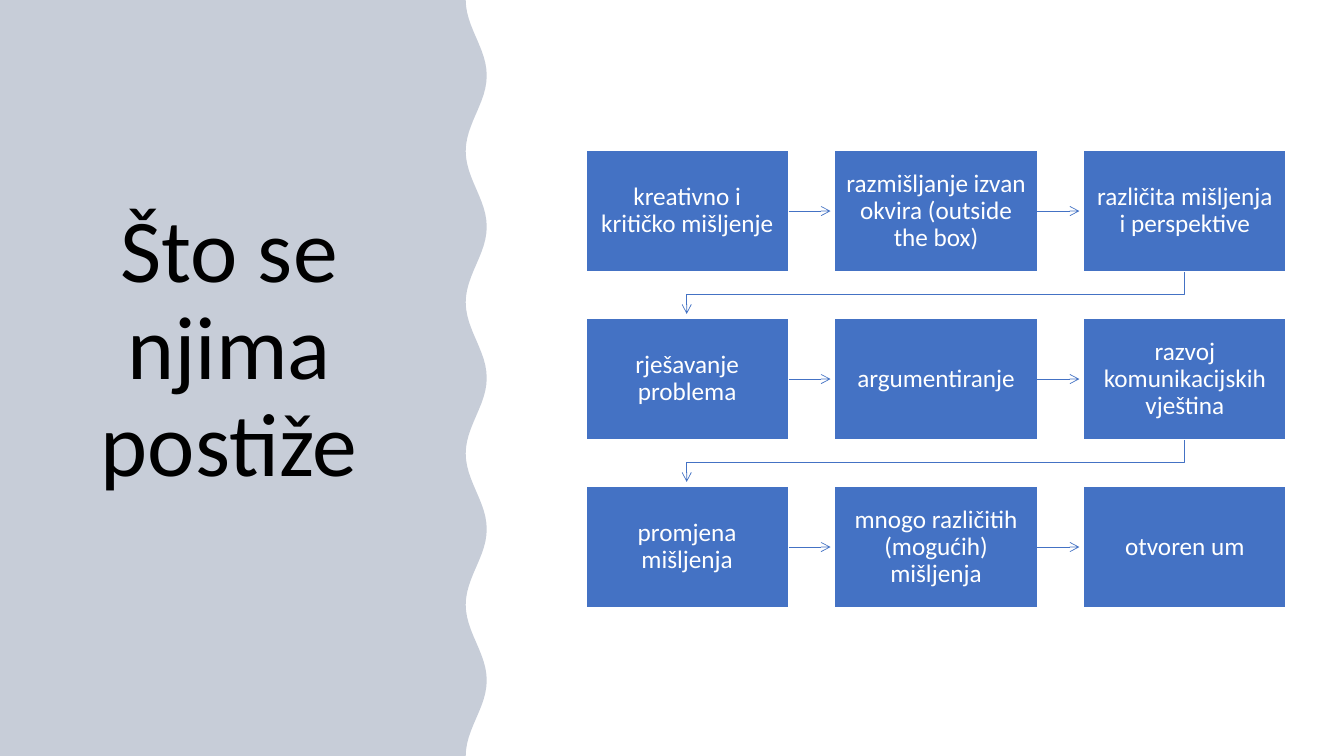
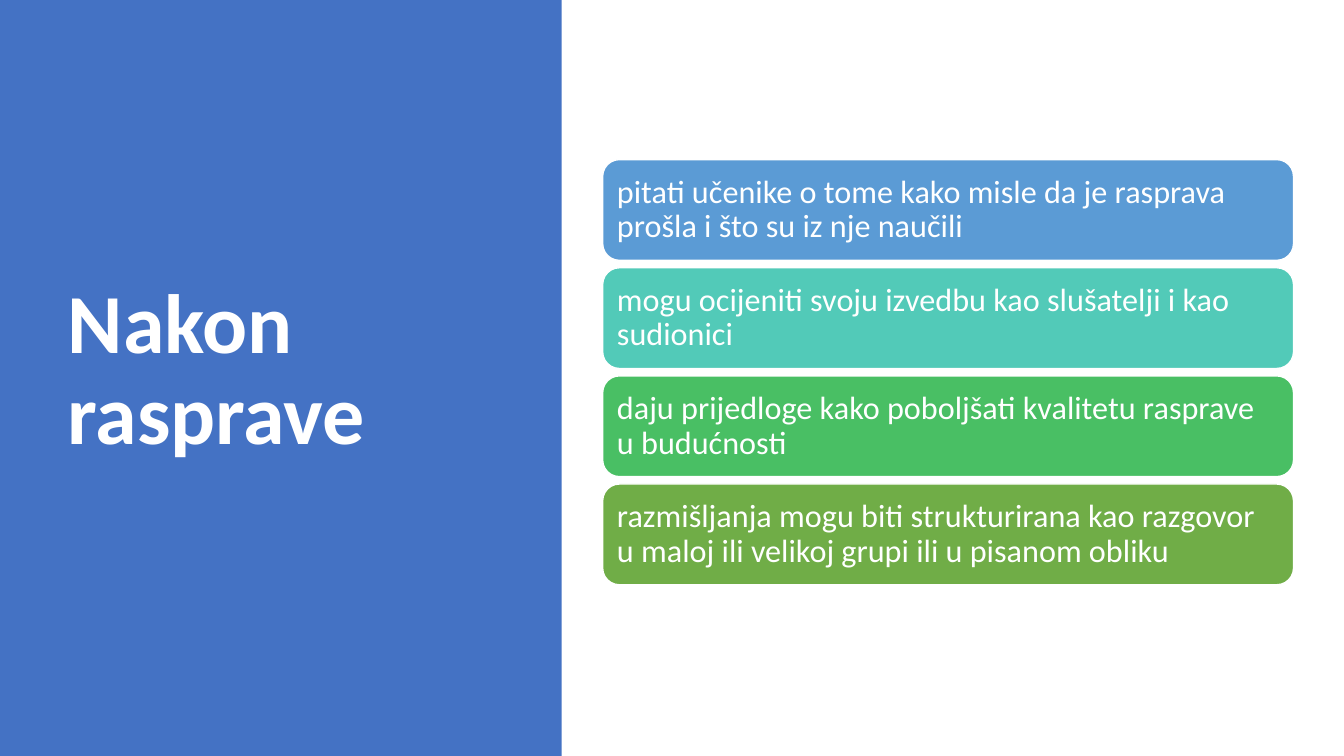
"""Builds two slides: a wave-edged flow of outcomes and a list of follow-up steps."""
from dataclasses import dataclass
from math import cos, pi
from typing import Any

from lxml.etree import SubElement
from pptx import Presentation
from pptx.dml.color import RGBColor
from pptx.enum.shapes import MSO_CONNECTOR, MSO_SHAPE
from pptx.enum.text import MSO_ANCHOR, MSO_AUTO_SIZE, PP_ALIGN
from pptx.oxml.ns import qn
from pptx.util import Emu, Pt

PX = 9525
PAGE_WIDTH, PAGE_HEIGHT = 1280, 720
FONT = "Calibri"
BLUE, NAVY, WHITE, BLACK = "4472C4", "203864", "FFFFFF", "000000"


@dataclass(frozen=True)
class Area:
    left: int
    top: int
    width: int
    height: int

    def emu(self) -> list[Emu]:
        return [px(value) for value in (self.left, self.top, self.width, self.height)]


@dataclass(frozen=True)
class TextStyle:
    size: int
    colour: str
    align: PP_ALIGN
    anchor: MSO_ANCHOR = MSO_ANCHOR.MIDDLE
    bold: bool = False


@dataclass(frozen=True)
class Card:
    text: str
    area: Area
    fill: str


STEPS = [
    ["kreativno i kritičko mišljenje", "razmišljanje izvan okvira (outside the box)",
     "različita mišljenja i perspektive"],
    ["rješavanje problema", "argumentiranje", "razvoj komunikacijskih vještina"],
    ["promjena mišljenja", "mnogo različitih (mogućih) mišljenja", "otvoren um"],
]
REFLECTIONS = [
    ("pitati učenike o tome kako misle da je rasprava prošla i što su iz nje naučili", "5B9BD5"),
    ("mogu ocijeniti svoju izvedbu kao slušatelji i kao sudionici", "52CAB8"),
    ("daju prijedloge kako poboljšati kvalitetu rasprave u budućnosti", "49BF64"),
    ("razmišljanja mogu biti strukturirana kao razgovor u maloj ili velikoj grupi "
     "ili u pisanom obliku", "70AD47"),
]


def px(value: float) -> Emu:
    return Emu(round(value * PX))


def colour(code: str) -> RGBColor:
    return RGBColor.from_string(code)


def apply(target: Any, values: dict[str, Any]) -> None:
    for name, value in values.items():
        setattr(target, name, value)


def write(shape: Any, text: str, style: TextStyle, inset: int | None = None) -> None:
    frame = shape.text_frame
    frame.text = text
    apply(frame, {"word_wrap": True, "auto_size": MSO_AUTO_SIZE.NONE,
                  "vertical_anchor": style.anchor})
    if inset is not None:
        sides = ("left", "right", "top", "bottom")
        apply(frame, {f"margin_{side}": px(inset) for side in sides})
    para = frame.paragraphs[0]
    apply(para, {"alignment": style.align, "line_spacing": 0.9})
    span = para.runs[0]
    apply(span.font, {"name": FONT, "size": Pt(style.size), "bold": style.bold})
    span.font.color.rgb = colour(style.colour)


def paint(shape: Any, fill: str, outline: str | None = None) -> None:
    shape.shadow.inherit = False
    shape.fill.solid()
    shape.fill.fore_color.rgb = colour(fill)
    if outline is None:
        shape.line.fill.background()
    else:
        shape.line.color.rgb = colour(outline)
        shape.line.width = Pt(1)


def draw_title(page: Any, text: str, area: Area, style: TextStyle) -> None:
    title = page.shapes.title
    apply(title, dict(zip(("left", "top", "width", "height"), area.emu())))
    write(title, text, style)
    page.shapes._spTree.append(title._element)


def draw_card(page: Any, card: Card, kind: MSO_SHAPE, style: TextStyle, inset: int) -> None:
    box = page.shapes.add_shape(kind, *card.area.emu())
    paint(box, card.fill, WHITE)
    write(box, card.text, style, inset)


def draw_wave(page: Any) -> None:
    middle, swing, period, step = 453.6, 10, 144, 6
    edge = [(px(middle - swing * cos(2 * pi * y / period)), px(y))
            for y in range(0, PAGE_HEIGHT + step, step)]
    builder = page.shapes.build_freeform(0, 0)
    builder.add_line_segments([*edge, (0, px(PAGE_HEIGHT))], close=True)
    panel = builder.convert_to_shape()
    paint(panel, NAVY)
    tint = panel._element.spPr.find(qn("a:solidFill"))[0]
    SubElement(tint, qn("a:alpha"), val="25000")


def finish_arrow(arrow: Any) -> None:
    arrow.line.color.rgb = colour(BLUE)
    arrow.line.width = Pt(0.5)
    SubElement(arrow.line._get_or_add_ln(), qn("a:tailEnd"), type="arrow")


def draw_arrow(page: Any, points: list[tuple[int, int]]) -> None:
    spots = [(px(x), px(y)) for x, y in points]
    if len(spots) == 2:
        arrow = page.shapes.add_connector(MSO_CONNECTOR.STRAIGHT, *spots[0], *spots[1])
        finish_arrow(arrow)
        SubElement(arrow._element.spPr, qn("a:effectLst"))
        return
    builder = page.shapes.build_freeform(*spots[0])
    builder.add_line_segments(spots[1:], close=False)
    arrow = builder.convert_to_shape()
    arrow.fill.background()
    finish_arrow(arrow)
    arrow.shadow.inherit = False


def build_outcomes(page: Any) -> None:
    draw_wave(page)
    draw_title(page, "Što se njima postiže", Area(48, 76, 340, 401),
               TextStyle(64, BLACK, PP_ALIGN.CENTER, MSO_ANCHOR.BOTTOM))
    left, top, width, height, across, down = 558, 143, 193, 116, 237, 160
    style = TextStyle(18, WHITE, PP_ALIGN.CENTER)
    last = len(STEPS[0]) - 1
    first_centre = left + width // 2
    for row, texts in enumerate(STEPS):
        y = top + row * down
        for column, text in enumerate(texts):
            x = left + column * across
            draw_card(page, Card(text, Area(x, y, width, height), BLUE),
                      MSO_SHAPE.RECTANGLE, style, 9)
            if column < last:
                centre = y + height // 2
                draw_arrow(page, [(x + width, centre), (x + across - 4, centre)])
        if row < len(STEPS) - 1:
            last_centre, bottom = first_centre + last * across, y + height
            bend, end = bottom + 21, y + down - 4
            draw_arrow(page, [(last_centre, bottom), (last_centre, bend),
                              (first_centre, bend), (first_centre, end)])


def build_reflections(page: Any) -> None:
    panel = page.shapes.add_shape(MSO_SHAPE.RECTANGLE, *Area(0, 0, 535, PAGE_HEIGHT).emu())
    paint(panel, BLUE)
    draw_title(page, "Nakon rasprave", Area(55, 65, 399, 578),
               TextStyle(60, WHITE, PP_ALIGN.LEFT, bold=True))
    style = TextStyle(23, WHITE, PP_ALIGN.LEFT)
    for index, (text, fill) in enumerate(REFLECTIONS):
        card = Card(text, Area(574, 152 + index * 103, 658, 96), fill)
        draw_card(page, card, MSO_SHAPE.ROUNDED_RECTANGLE, style, 9)


def main() -> None:
    deck = Presentation()
    apply(deck, {"slide_width": px(PAGE_WIDTH), "slide_height": px(PAGE_HEIGHT)})
    for build in (build_outcomes, build_reflections):
        build(deck.slides.add_slide(deck.slide_layouts[5]))
    deck.save("out.pptx")


if __name__ == "__main__":
    main()
